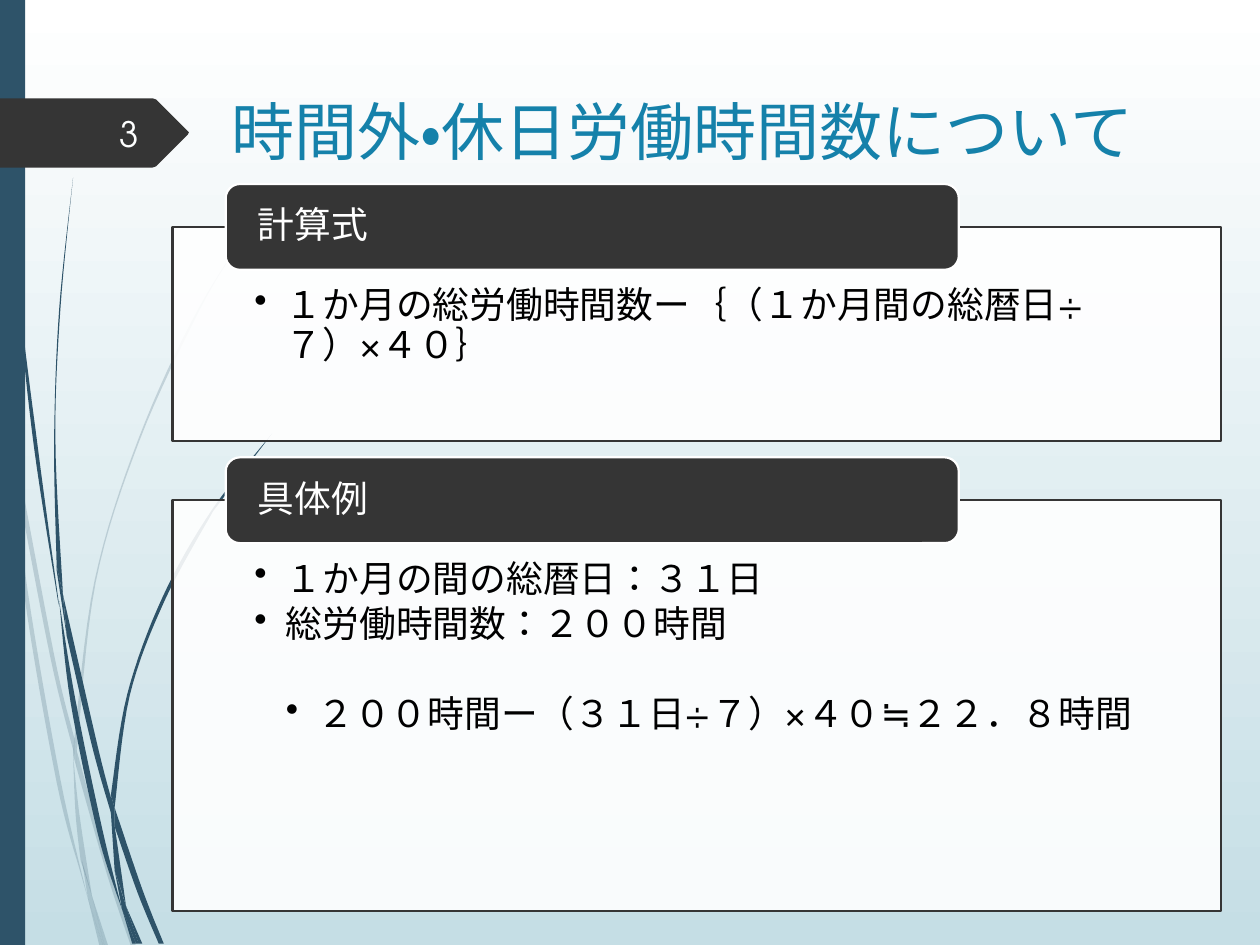
"""Build the slide on overtime and holiday working hours."""
from dataclasses import dataclass

import lxml.etree
import pptx
import pptx.dml.color
import pptx.enum.lang
import pptx.enum.shapes
import pptx.enum.text
import pptx.oxml.ns
import pptx.util

Cm = pptx.util.Cm
Pt = pptx.util.Pt
Kind = pptx.enum.shapes.MSO_SHAPE
Align = pptx.enum.text.PP_ALIGN
Anchor = pptx.enum.text.MSO_ANCHOR
Point = tuple[float, float]

FONT = "TeX Gyre Adventor"
INCH = 2.54
COLORS = {
    "white": "FFFFFF", "sky": "C5DEE5", "navy": "2E5369", "dark": "353535",
    "title": "1581AA", "black": "000000", "page": "FEFFFF",
}


@dataclass(frozen=True)
class Strand:
    out: tuple[Point, ...]
    back: tuple[Point, ...]
    alpha: int = 100


@dataclass(frozen=True)
class Item:
    text: str
    level: int = 1
    after: float = 3.4


@dataclass(frozen=True)
class Panel:
    head: str
    top: float
    height: float
    items: tuple[Item, ...]


FAINT = (
    (((0, 2.82), (0.06, 3.22), (0.08, 3.5)), ((0.07, 3.44), (0, 2.99))),
    (((0.1, 3.45), (0.43, 5.2), (0.59, 5.86)), ((0.59, 5.99), (0.4, 5.22), (0.12, 3.76))),
    (((0.61, 5.96), (0.88, 6.92), (1.08, 7.51)), ((1.04, 7.51), (0.85, 6.94), (0.61, 6.1))),
    (((0.73, 7.11), (0.86, 7.51)), ((0.83, 7.51), (0.73, 7.11))),
    (((0.08, 3.5), (0.22, 4.69), (0.48, 6.19), (0.7, 7.14)),
     ((0.64, 6.93), (0.45, 6.21), (0.19, 4.7), (0.08, 3.5))),
    (((0.58, 5.99), (0.63, 6.46), (0.73, 7.11)), ((0.64, 6.83), (0.6, 6.46), (0.58, 5.99))),
    (((0.59, 5.86), (0.75, 4.61), (1.1, 3.48), (1.58, 2.44), (2.17, 1.53)),
     ((1.87, 1.98), (1.59, 2.45), (1.11, 3.49), (0.76, 4.62), (0.61, 5.96))),
    (((0.7, 7.14), (0.82, 7.51)), ((0.79, 7.51), (0.7, 7.14))),
    (((0.59, 5.86), (0.61, 5.96)), ((0.61, 6.1), (0.58, 5.99))),
    (((0.65, 6.83), (0.73, 7.11), (0.83, 7.51)), ((0.82, 7.51), (0.7, 7.14))),
)
SOLID = (
    (((0.03, 0), (0.06, 1.09), (0.15, 2.32), (0.3, 3.55), (0.47, 4.81)),
     ((0.46, 4.77), (0.27, 3.55), (0.14, 2.33), (0.05, 1.1), (0.02, 0))),
    (((0.5, 4.72), (0.77, 5.9), (0.88, 6.33)), ((0.88, 6.45), (0.73, 5.92), (0.53, 5.05))),
    (((0.91, 6.41), (1.13, 7.06), (1.3, 7.49)), ((1.26, 7.49), (1.09, 7.08), (0.91, 6.56))),
    (((0.47, 4.77), (0.6, 5.56), (0.81, 6.57), (0.97, 7.22)),
     ((0.92, 7.08), (0.77, 6.59), (0.56, 5.57), (0.47, 4.77))),
    (((0.58, 1.41), (0.48, 2.45), (0.44, 3.49), (0.5, 4.72)),
     ((0.45, 4.49), (0.43, 3.49), (0.47, 2.45), (0.58, 1.41))),
    (((1, 7.19), (1.13, 7.49)), ((1.1, 7.49), (1, 7.19))),
    (((0.45, 4.49), (0.5, 4.72)), ((0.53, 5.05), (0.45, 4.53))),
    (((0.88, 6.31), (1.01, 5.51), (1.29, 4.74), (1.68, 4.05), (2.16, 3.44)),
     ((1.69, 4.06), (1.31, 4.76), (1.03, 5.52), (0.91, 6.41))),
    (((0.97, 7.22), (1.08, 7.49)), ((1.05, 7.49), (0.97, 7.22))),
    (((0.88, 6.45), (0.91, 6.56), (1, 7.19)), ((0.96, 7.06), (0.91, 6.91))),
    (((0.88, 6.31), (0.91, 6.41)), ((0.91, 6.56), (0.88, 6.45))),
    (((0.91, 6.91), (1, 7.19), (1.1, 7.49)), ((1.08, 7.49), (0.97, 7.22))),
)
STRANDS = [Strand(*pair, alpha=20) for pair in FAINT] + [Strand(*pair) for pair in SOLID]
TAG = ((0, 0.78), (1.21, 0.78), (1.24, 0.79), (1.49, 1.04), (1.5, 1.05),
       (1.49, 1.07), (1.24, 1.32), (1.21, 1.33), (0, 1.33))
PANELS = (
    Panel("計算式", 4.57, 4.32, (Item("１か月の総労働時間数ー｛（１か月間の総暦日÷７）×４０｝"),)),
    Panel("具体例", 10.08, 8.28, (
        Item("１か月の間の総暦日：３１日"),
        Item("総労働時間数：２００時間", after=28.5),
        Item("２００時間ー（３１日÷７）×４０≒２２．８時間", level=2),
    )),
)


def tint(name: str) -> pptx.dml.color.RGBColor:
    """Return the named colour."""
    return pptx.dml.color.RGBColor.from_string(COLORS[name])


def paint(shape, fill: str, line: str | None = None, alpha: int = 100) -> None:
    """Set fill, opacity and line of a shape."""
    shape.shadow.inherit = False
    shape.fill.solid()
    shape.fill.fore_color.rgb = tint(fill)
    if alpha < 100:
        color = shape._element.spPr.xpath("./a:solidFill/a:srgbClr")[0]
        tag = pptx.oxml.ns.qn("a:alpha")
        lxml.etree.SubElement(color, tag).set("val", str(alpha * 1000))
    if line:
        shape.line.color.rgb = tint(line)
        shape.line.width = Pt(1.25)
    else:
        shape.line.fill.background()


def smooth(edge: tuple[Point, ...], steps: int = 8) -> list[Point]:
    """Return points on a spline through the edge."""
    if len(edge) < 3:
        return list(edge)
    ends = (edge[0], *edge, edge[-1])
    curve = [edge[0]]
    for a, b, c, d in zip(ends, ends[1:], ends[2:], ends[3:]):
        for step in range(1, steps + 1):
            t = step / steps
            curve.append(tuple(
                q + t * (r - p) / 2 + t**2 * (2 * p - 5 * q + 4 * r - s) / 2
                + t**3 * (3 * q - p - 3 * r + s) / 2
                for p, q, r, s in zip(a, b, c, d)
            ))
    return curve


def trace(slide, points, fill: str, alpha: int = 100) -> None:
    """Draw a closed outline."""
    dots = [(Cm(x * INCH), Cm(y * INCH)) for x, y in points]
    pen = slide.shapes.build_freeform(*dots[0], scale=1.0)
    pen.add_line_segments(dots[1:], close=True)
    paint(pen.convert_to_shape(), fill, alpha=alpha)


def write(shape, text: str, *, size: float, color: str, align=Align.LEFT,
          anchor=Anchor.TOP, inset=(0.25, 0.13, 0.25, 0.13),
          level: int = 0, after: float = 0, space: float = 1.0) -> None:
    """Add one formatted paragraph to a shape."""
    frame = shape.text_frame
    frame.word_wrap = True
    frame.vertical_anchor = anchor
    sides = ("left", "top", "right", "bottom")
    for side, gap in zip(sides, inset):
        setattr(frame, f"margin_{side}", Cm(gap))
    para = frame.add_paragraph() if frame.text else frame.paragraphs[0]
    para.alignment = align
    para.line_spacing = space
    para.space_after = Pt(after)
    if level:
        props = para._p.get_or_add_pPr()
        props.set("marL", str(Cm(0.635 * level)))
        props.set("indent", str(-Cm(0.635)))
        lxml.etree.SubElement(props, pptx.oxml.ns.qn("a:buChar")).set("char", "•")
    run = para.add_run()
    run.text = text
    run.font.name = FONT
    run.font.size = Pt(size)
    run.font.color.rgb = tint(color)
    run.font.language_id = pptx.enum.lang.MSO_LANGUAGE_ID.JAPANESE


def block(slide, kind, box, fill: str, line: str | None = None, alpha: int = 100):
    """Add a painted preset shape."""
    shape = slide.shapes.add_shape(kind, *map(Cm, box))
    paint(shape, fill, line, alpha)
    return shape


def draw(slide, panel: Panel) -> None:
    """Draw a panel with its heading tab."""
    box = (3.48, panel.top, 21.13, panel.height)
    body = block(slide, Kind.RECTANGLE, box, "white", "dark", 90)
    for item in panel.items:
        write(body, item.text, size=21, color="black", level=item.level,
              after=item.after, space=0.9, inset=(1.65, 1.22, 1.65, 0.41))
    box = (4.55, panel.top - 0.86, 14.78, 1.73)
    head = block(slide, Kind.ROUNDED_RECTANGLE, box, "dark", "white")
    write(head, panel.head, size=21, color="white", anchor=Anchor.MIDDLE,
          space=0.9, inset=(0.56, 0, 0.56, 0))


def main() -> None:
    """Build and save the slide."""
    deck = pptx.Presentation()
    deck.slide_width, deck.slide_height = Cm(25.4), Cm(19.05)
    slide = deck.slides.add_slide(deck.slide_layouts[6])
    back = slide.background.fill
    back.gradient()
    back.gradient_angle = 270
    for stop, name, place in zip(back.gradient_stops, ("white", "sky"), (0, 1)):
        stop.color.rgb = tint(name)
        stop.position = place
    for strand in STRANDS:
        trace(slide, smooth(strand.out) + smooth(strand.back), "navy", strand.alpha)
    block(slide, Kind.RECTANGLE, (0, 0, 0.51, 19.05), "navy")
    trace(slide, TAG, "dark")
    title = slide.shapes.add_textbox(*map(Cm, (4.42, 1.73, 19.84, 3.56)))
    write(title, "時間外・休日労働時間数について", size=36, color="title")
    for panel in PANELS:
        draw(slide, panel)
    page = slide.shapes.add_textbox(*map(Cm, (1.42, 2.18, 1.63, 1.02)))
    write(page, "3", size=20, color="page", align=Align.RIGHT, anchor=Anchor.MIDDLE)
    deck.save("out.pptx")


if __name__ == "__main__":
    main()
